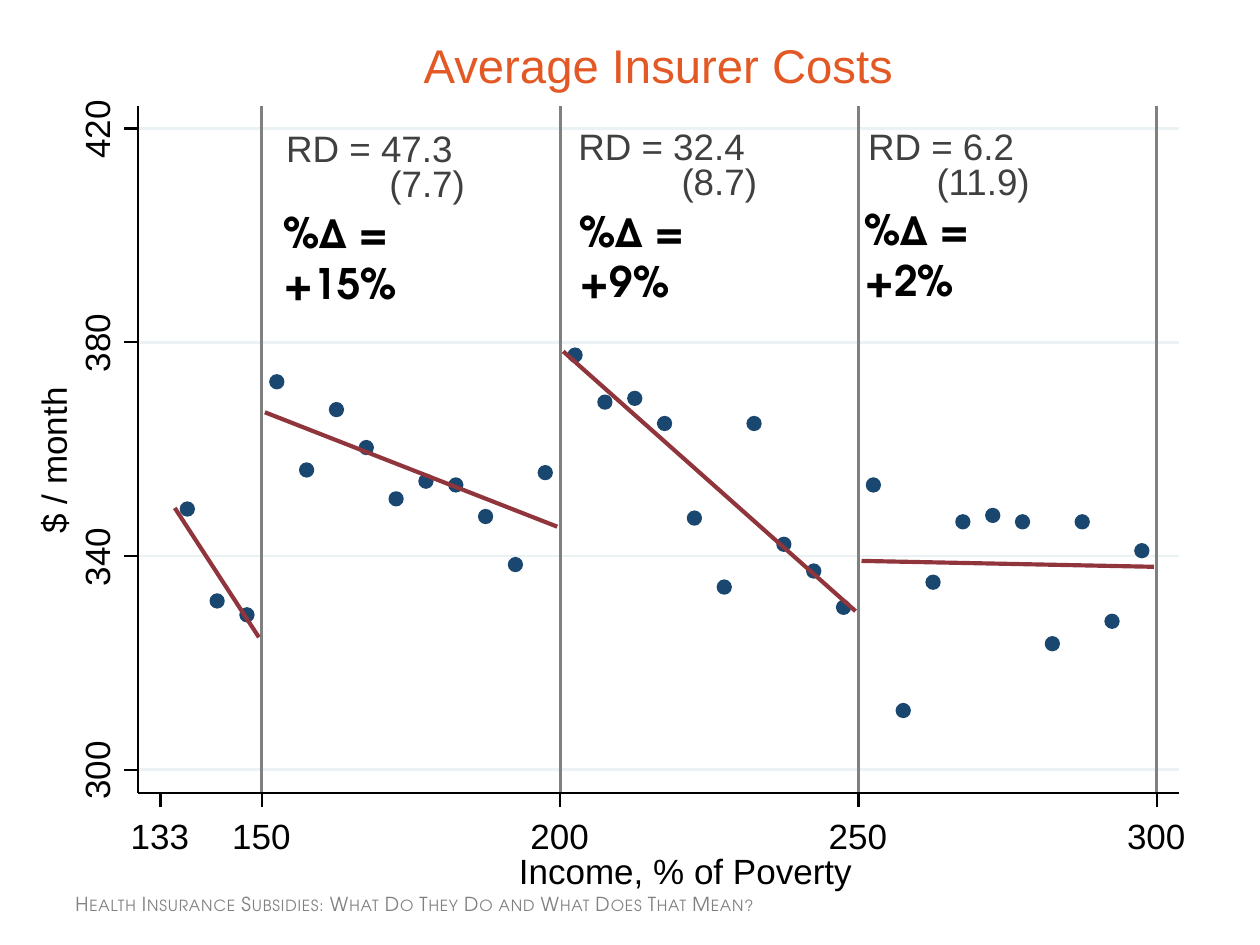
import pptx
import pptx.util
import pptx.dml.color
import pptx.enum.shapes
import pptx.enum.text
import pptx.oxml.ns

LEFT, RIGHT, TOP, BOTTOM = 2.79, 23.77, 2.13, 15.98
TICK = 0.29
BLACK, GREY = "000000", "404040"

COSTS = [
    348.8, 331.6, 329.0,
    372.6, 356.1, 367.4, 360.3, 350.7, 354.0, 353.3, 347.4, 338.4, 355.6,
    377.6, 368.8, 369.5, 364.8, 347.1, 334.2, 364.8, 342.2, 337.2, 330.4,
    353.3, 311.1, 335.1, 346.4, 347.6, 346.4, 323.6, 346.4, 327.8, 341.0,
]
FIRST_INCOME, INCOME_STEP = 137.5, 5

# Income and cost at the two ends of each fitted line
FITS = [
    ((135.4, 349.0), (149.5, 324.8)),
    ((150.5, 366.9), (199.5, 345.5)),
    ((200.5, 378.3), (249.5, 329.7)),
    ((250.5, 339.1), (299.5, 338.0)),
]

# Estimate (text, left, top, width), error (text, left, indent), change (text, left, top, width)
ESTIMATES = [
    (("RD = 47.3", 5.77, 2.54, 3.5), ("(7.7)", 6.2, 1.65), ("%Δ = +15%", 5.72, 4.17, 3.84)),
    (("RD = 32.4", 11.66, 2.49, 3.5), ("(8.7)", 12.09, 1.65), ("%Δ = +9%", 11.68, 4.14, 3.4)),
    (("RD = 6.2", 17.5, 2.49, 3.1), ("(11.9)", 18.47, 0.41), ("%Δ = +2%", 17.42, 4.11, 3.4)),
]


def color(hex_string):
    return pptx.dml.color.RGBColor.from_string(hex_string)


def lengths(*values):
    return [pptx.util.Cm(value) for value in values]


def income_x(income):
    return 5.28 + (income - 150) * (23.32 - 5.28) / 150


def cost_y(cost):
    return 15.52 - (cost - 300) * (15.52 - 2.59) / 120


class Plot:
    font = "Arial"
    label_font = "TeX Gyre Adventor"

    def __init__(self, slide):
        self.slide = slide

    def outline(self, shape, line, width):
        shape.line.color.rgb = color(line)
        shape.line.width = pptx.util.Pt(width)

    def shape(self, kind, left, top, width, height, fill, line_width):
        shape = self.slide.shapes.add_shape(kind, *lengths(left, top, width, height))
        shape.shadow.inherit = False
        shape.fill.solid()
        shape.fill.fore_color.rgb = color(fill)
        self.outline(shape, fill, line_width)

    def line(self, x1, y1, x2, y2, line=BLACK, width=1.25):
        connector = self.slide.shapes.add_connector(
            pptx.enum.shapes.MSO_CONNECTOR.STRAIGHT, *lengths(x1, y1, x2, y2))
        self.outline(connector, line, width)
        properties = connector._element.spPr
        properties.append(properties.makeelement(pptx.oxml.ns.qn("a:effectLst"), {}))

    def fit(self, start, end):
        first, last = [lengths(income_x(income), cost_y(cost)) for income, cost in (start, end)]
        builder = self.slide.shapes.build_freeform(*first)
        builder.add_line_segments([last], close=False)
        shape = builder.convert_to_shape()
        shape.shadow.inherit = False
        shape.fill.background()
        self.outline(shape, "90353B", 2.38)

    def set_text(self, shape, text, size, ink, font=None, bold=False):
        frame = shape.text_frame
        frame.word_wrap = True
        frame.auto_size = pptx.enum.text.MSO_AUTO_SIZE.NONE
        frame.vertical_anchor = pptx.enum.text.MSO_ANCHOR.TOP
        frame.margin_left = frame.margin_right = frame.margin_top = frame.margin_bottom = 0
        paragraph = frame.paragraphs[0]
        paragraph.text = text
        paragraph.font.name = font or self.font
        paragraph.font.size = pptx.util.Pt(size)
        paragraph.font.bold = bold
        paragraph.font.color.rgb = color(ink)
        return paragraph

    def text(self, text, left, top, width, height=0.9, size=20, ink=BLACK,
             font=None, bold=False, rotation=0, indent=0, parent=None):
        shapes = (parent or self.slide).shapes
        box = shapes.add_textbox(*lengths(left, top, width, height))
        box.rotation = rotation
        paragraph = self.set_text(box, text, size, ink, font, bold)
        if indent:
            paragraph._p.get_or_add_pPr().set("marL", str(pptx.util.Cm(indent)))
        return box

    def title(self, text):
        title = self.slide.shapes.title
        title.left, title.top, title.width, title.height = lengths(3.3, 0.74, 19.94, 1.14)
        paragraph = self.set_text(title, text, 27, "E35925")
        paragraph.alignment = pptx.enum.text.PP_ALIGN.CENTER

    def footer(self, text):
        box = self.text(text, 1.27, 17.91, 19.1, 0.61, 11, "808080", self.label_font)
        frame = box.text_frame
        frame.margin_left = frame.margin_right = pptx.util.Cm(0.25)
        frame.vertical_anchor = pptx.enum.text.MSO_ANCHOR.MIDDLE
        properties = frame.paragraphs[0].runs[0]._r.get_or_add_rPr()
        properties.set("cap", "small")
        properties.set("spc", "50")


def main():
    presentation = pptx.Presentation()
    presentation.slide_width, presentation.slide_height = lengths(25.4, 19.05)
    plot = Plot(presentation.slides.add_slide(presentation.slide_layouts[5]))
    plot.title("Average Insurer Costs")
    shapes = pptx.enum.shapes.MSO_SHAPE

    # Plot area, grid and income thresholds
    plot.shape(shapes.RECTANGLE, LEFT, 2.29, RIGHT - LEFT, 13.84, "FFFFFF", 1.25)
    cost_ticks = range(300, 421, 40)
    thresholds = range(150, 301, 50)
    for cost in cost_ticks:
        plot.line(LEFT, cost_y(cost), RIGHT, cost_y(cost), "EAF2F3", 1.63)
    for income in thresholds:
        plot.line(income_x(income), BOTTOM, income_x(income), TOP, "808080", 1.63)

    # Data points and fitted lines
    dot = 0.25
    for index, cost in enumerate(COSTS):
        x = income_x(FIRST_INCOME + INCOME_STEP * index)
        plot.shape(shapes.OVAL, x - dot / 2, cost_y(cost) - dot / 2, dot, dot, "1A476F", 1.63)
    for start, end in FITS:
        plot.fit(start, end)

    # Cost axis
    plot.line(LEFT, BOTTOM, LEFT, TOP)
    for cost in cost_ticks:
        y = cost_y(cost)
        plot.line(LEFT, y, LEFT - TICK, y)
        plot.text(str(cost), 1.24, y - 0.67, 1.55, 1, rotation=270)
    plot.text("$ / month", -0.46, 8.79, 3.07, 0.86, rotation=270)

    # Income axis
    plot.line(LEFT, BOTTOM, RIGHT, BOTTOM)
    for income in (133, *thresholds):
        x = income_x(income)
        plot.line(x, BOTTOM, x, BOTTOM + TICK)
        plot.text(str(income), x - 0.6, 16.41, 1.55, 1)
    plot.text("Income, % of Poverty", 10.46, 17.12, 6.9, 0.86)

    # Estimates at each threshold
    for (estimate, left, top, width), (error, error_left, indent), change in ESTIMATES:
        group = plot.slide.shapes.add_group_shape()
        plot.text(estimate, left, top, width, size=21, ink=GREY, parent=group)
        plot.text(error, error_left, top + 0.71, 3.3, size=21, ink=GREY,
                  indent=indent, parent=group)
        plot.text(*change, height=1.02, size=24, font=plot.label_font, bold=True)

    # Footer
    plot.footer("Health Insurance Subsidies: What Do They Do and What Does That Mean?")
    presentation.save("out.pptx")


if __name__ == "__main__":
    main()
